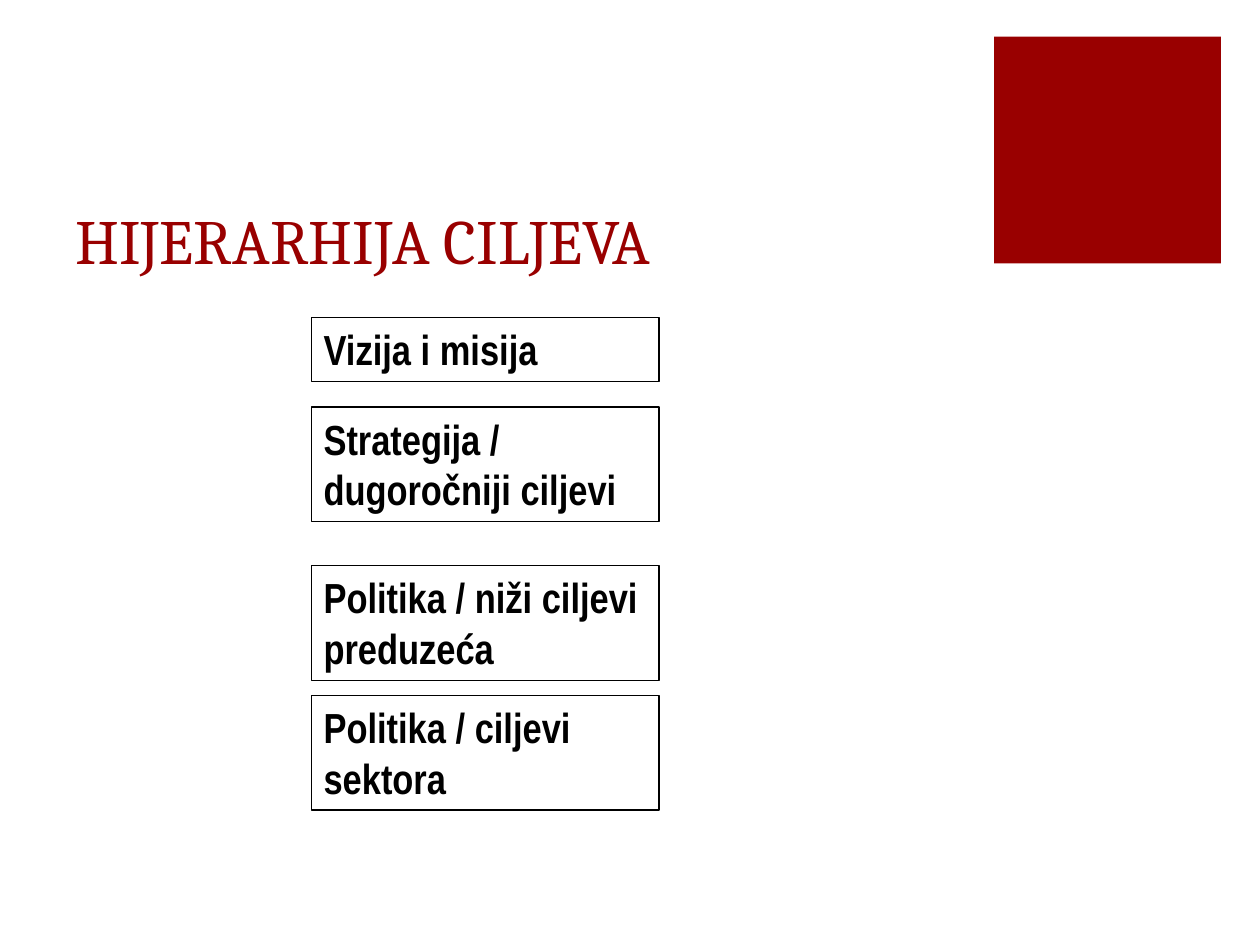
from dataclasses import dataclass

from pptx import Presentation
from pptx.dml.color import RGBColor
from pptx.enum.shapes import MSO_SHAPE
from pptx.enum.text import MSO_ANCHOR, PP_ALIGN
from pptx.util import Inches, Pt

COLORS = {"red": "990000", "black": "000000"}
WIDE, HIGH = 10, 7.5

# Column shared by all levels, and the two box heights
LEFT, WIDTH = 0.247 * WIDE, 0.276 * WIDE
ROW = {1: 0.51, 2: 0.91}


@dataclass
class Level:
    text: str
    top: float
    lines: int = 2


LEVELS = [
    Level("Vizija i misija", 2.52, lines=1),
    Level("Strategija / dugoročniji ciljevi", 3.23),
    Level("Politika / niži ciljevi preduzeća", 4.49),
    Level("Politika / ciljevi sektora", 5.52),
]


def color(name: str) -> RGBColor:
    return RGBColor.from_string(COLORS[name])


def write(shape, text: str, *, font: str, size: float, tint: str,
          bold: bool = False, anchor=MSO_ANCHOR.TOP) -> None:
    frame = shape.text_frame
    frame.word_wrap = True
    frame.vertical_anchor = anchor
    para = frame.paragraphs[0]
    para.alignment = PP_ALIGN.LEFT
    run = para.add_run()
    run.text = text
    run.font.name = font
    run.font.size = Pt(size)
    run.font.bold = bold
    run.font.color.rgb = color(tint)


def add_rect(slide, left: float, top: float, width: float, height: float):
    rect = slide.shapes.add_shape(
        MSO_SHAPE.RECTANGLE, *map(Inches, (left, top, width, height)))
    rect.shadow.inherit = False
    return rect


def add_level(slide, level: Level) -> None:
    box = add_rect(slide, LEFT, level.top, WIDTH, ROW[level.lines])
    box.fill.background()
    box.line.color.rgb = color("black")
    box.line.width = Pt(0.75)
    write(box, level.text, font="Arial Narrow", size=24, tint="black", bold=True)


def main() -> None:
    deck = Presentation()
    deck.slide_width, deck.slide_height = Inches(WIDE), Inches(HIGH)
    slide = deck.slides.add_slide(deck.slide_layouts[6])

    # Corner square
    square = add_rect(slide, 7.89, 0.29, 1.8, 1.8)
    square.fill.solid()
    square.fill.fore_color.rgb = color("red")
    square.line.fill.background()

    # Title
    title = slide.shapes.add_textbox(*map(Inches, (0.5, 1, 7.12, 1.25)))
    write(title, "HIJERARHIJA CILJEVA", font="Cambria", size=36, tint="red",
          anchor=MSO_ANCHOR.BOTTOM)

    # Hierarchy of goals
    for level in LEVELS:
        add_level(slide, level)

    deck.save("out.pptx")


if __name__ == "__main__":
    main()
